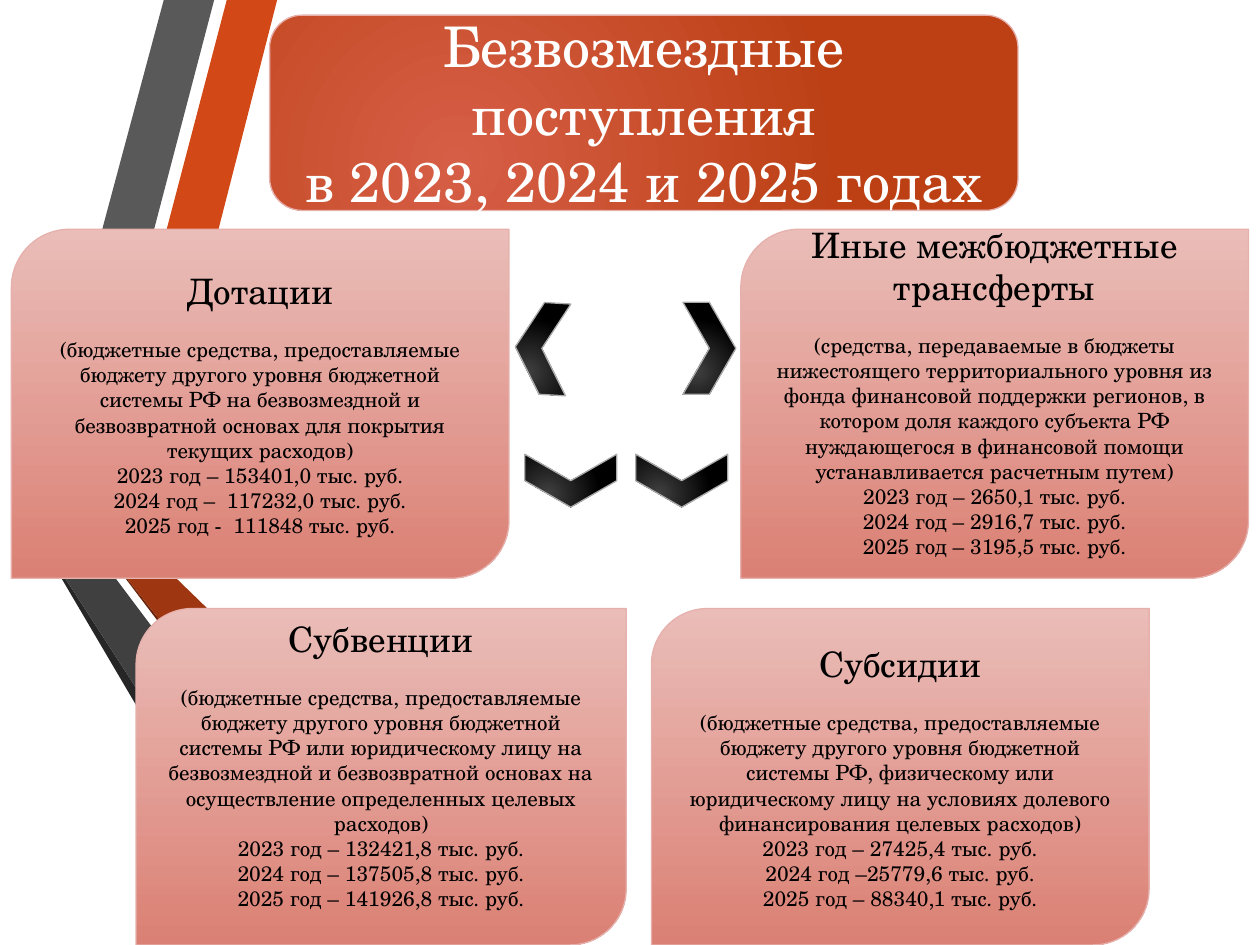
from dataclasses import dataclass

from lxml.etree import SubElement
from pptx import Presentation
from pptx.dml.color import RGBColor
from pptx.enum.shapes import MSO_SHAPE as Preset
from pptx.enum.text import MSO_ANCHOR as Anchor, MSO_AUTO_SIZE as AutoSize, PP_ALIGN as Align
from pptx.oxml.ns import qn
from pptx.util import Inches, Pt

CELL = Inches(0.1)  # the slide is a grid of 100 columns by 75 rows
COLUMNS, ROWS = 100, 75


@dataclass(frozen=True)
class Theme:
    font: str = "TeX Gyre Schola"
    title_size: int = 32
    heading_size: int = 20
    body_size: int = 12
    blank_line: float = 14.4
    edge_width: float = 0.75
    title_text: str = "FFFFFF"
    card_text: str = "000000"
    card_edge: str = "E6B1AC"
    arrow_edge: str = "ABABAB"
    title_fill: tuple = ("D65E46", "BC4014")
    card_fill: tuple = ("EABDB8", "DB8074")
    arrow_fill: tuple = ("404040", "000000")


@dataclass(frozen=True)
class Box:
    col: float
    row: float
    cols: float
    rows: float

    def emu(self) -> list[int]:
        return [round(n * CELL) for n in (self.col, self.row, self.cols, self.rows)]


@dataclass(frozen=True)
class Ribbon:
    color: str
    corners: tuple


@dataclass(frozen=True)
class Card:
    box: Box
    heading: str
    meaning: str
    years: tuple
    raised: bool = False  # text sits half a line above the middle


@dataclass(frozen=True)
class Arrow:
    box: Box
    rotation: float


THEME = Theme()
TITLE = ("Безвозмездные поступления", "в 2023, 2024 и 2025 годах")
TITLE_BOX = Box(21.4, 1.2, 59.4, 15.5)
TOP_ROW, TOP_ROWS = 18.2, 27.7
LOW_ROW, LOW_ROWS = 48.3, 26.7

RIBBONS = (
    Ribbon("D34817", ((7, 42.4), (11, 43.4), (21.9, 0), (17.8, 0))),
    Ribbon("595959", ((16.8, 0), (12.7, 0), (2.2, 41.3), (6.2, 42.2))),
    Ribbon("262626", ((2.3, 41.3), (22.5, ROWS), (23.5, ROWS))),
    Ribbon("69240C", ((33, ROWS), (7.1, 42.5), (32.1, ROWS))),
    Ribbon("9E3611", ((7, 42.4), (7.1, 42.5), (33, ROWS), (43.5, ROWS), (11, 43.4))),
    Ribbon("404040", ((31.3, ROWS), (6.8, 43.2), (6.2, 42.2), (2.2, 41.3), (23.5, ROWS))),
)

CARDS = (
    Card(Box(0.9, TOP_ROW, 39.5, TOP_ROWS), "Дотации",
         "(бюджетные средства, предоставляемые бюджету другого уровня бюджетной системы РФ "
         "на безвозмездной и безвозвратной основах для покрытия текущих расходов)",
         ("2023 год – 153401,0 тыс. руб.", "2024 год –  117232,0 тыс. руб.",
          "2025 год -  111848 тыс. руб.")),
    Card(Box(10.8, LOW_ROW, 38.9, LOW_ROWS), "Субвенции",
         "(бюджетные средства, предоставляемые бюджету другого уровня бюджетной системы РФ "
         "или юридическому лицу на безвозмездной и безвозвратной основах на осуществление "
         "определенных целевых расходов)",
         ("2023 год – 132421,8 тыс. руб.", "2024 год – 137505,8 тыс. руб.",
          "2025 год – 141926,8 тыс. руб."), raised=True),
    Card(Box(51.7, LOW_ROW, 39.5, LOW_ROWS), "Субсидии",
         "(бюджетные средства, предоставляемые бюджету другого уровня бюджетной системы РФ, "
         "физическому или юридическому лицу на условиях долевого финансирования целевых "
         "расходов)",
         ("2023 год – 27425,4 тыс. руб.", "2024 год –25779,6 тыс. руб.",
          "2025 год – 88340,1 тыс. руб.")),
    Card(Box(58.8, TOP_ROW, 40.3, TOP_ROWS), "Иные межбюджетные трансферты",
         "(средства, передаваемые в бюджеты нижестоящего территориального уровня из фонда "
         "финансовой поддержки регионов, в котором доля каждого субъекта РФ нуждающегося в "
         "финансовой помощи устанавливается расчетным путем)",
         ("2023 год – 2650,1 тыс. руб.", "2024 год – 2916,7 тыс. руб.",
          "2025 год – 3195,5 тыс. руб."), raised=True),
)

ARROWS = (
    Arrow(Box(54.2, 24, 4.2, 7.3), 0),
    Arrow(Box(52, 34.5, 4.2, 7.3), 90),
    Arrow(Box(43.2, 34.5, 4.2, 7.3), 90),
    Arrow(Box(40.9, 24, 4.2, 7.3), 183.4),
)


def rgb(color: str) -> RGBColor:
    return RGBColor.from_string(color)


def draw_ribbon(shapes, ribbon: Ribbon) -> None:
    start, *others = ribbon.corners
    builder = shapes.build_freeform(*start, scale=CELL)
    builder.add_line_segments(others, close=True)
    band = builder.convert_to_shape()
    band.shadow.inherit = False
    band.fill.solid()
    band.fill.fore_color.rgb = rgb(ribbon.color)
    band.line.fill.background()


def draw_panel(shapes, preset, box: Box, colors: tuple, edge: str, radial: bool = False):
    """Add a preset shape with a two-colour gradient, downward or radial."""
    panel = shapes.add_shape(preset, *box.emu())
    panel.shadow.inherit = False
    panel.line.color.rgb = rgb(edge)
    panel.line.width = Pt(THEME.edge_width)
    panel.fill.gradient()
    panel.fill.gradient_angle = 270
    for stop, color, position in zip(panel.fill.gradient_stops, colors, (0, 1)):
        stop.color.rgb = rgb(color)
        stop.position = position
    if radial:
        gradient = panel.element.spPr.find(qn("a:gradFill"))
        gradient.remove(gradient.find(qn("a:lin")))
        circle = SubElement(gradient, qn("a:path"), {"path": "circle"})
        SubElement(circle, qn("a:fillToRect"),
                   {"l": "50000", "t": "100000", "r": "100000", "b": "50000"})
    return panel


def write_lines(frame, lines: list[tuple[str, int]], color: str) -> None:
    """Fill a text frame with centred paragraphs given as (text, size)."""
    frame.word_wrap = True
    frame.auto_size = AutoSize.NONE
    frame.vertical_anchor = Anchor.MIDDLE
    for index, (text, size) in enumerate(lines):
        paragraph = frame.add_paragraph() if index else frame.paragraphs[0]
        paragraph.alignment = Align.CENTER
        run = paragraph.add_run()
        run.text = text
        run.font.name = THEME.font
        run.font.size = Pt(size)
        run.font.color.rgb = rgb(color)


def draw_title(slide) -> None:
    plate = draw_panel(slide.shapes, Preset.ROUNDED_RECTANGLE, TITLE_BOX,
                       THEME.title_fill, THEME.card_edge, radial=True)
    title = slide.shapes.title
    title.left, title.top, title.width, title.height = TITLE_BOX.emu()
    write_lines(title.text_frame, [(line, THEME.title_size) for line in TITLE],
                THEME.title_text)
    plate.element.addnext(title.element)


def draw_card(shapes, card: Card) -> None:
    panel = draw_panel(shapes, Preset.ROUND_2_DIAG_RECTANGLE, card.box,
                       THEME.card_fill, THEME.card_edge)
    frame = panel.text_frame
    body = [(text, THEME.body_size) for text in (card.meaning, *card.years)]
    write_lines(frame, [(card.heading, THEME.heading_size), *body], THEME.card_text)
    frame.paragraphs[0].space_after = Pt(THEME.blank_line)
    if card.raised:
        frame.margin_bottom += Pt(THEME.blank_line)


def main() -> None:
    deck = Presentation()
    deck.slide_width, deck.slide_height = COLUMNS * CELL, ROWS * CELL
    slide = deck.slides.add_slide(deck.slide_layouts.get_by_name("Title Only"))
    for ribbon in RIBBONS:
        draw_ribbon(slide.shapes, ribbon)
    draw_title(slide)
    for card in CARDS:
        draw_card(slide.shapes, card)
    for arrow in ARROWS:
        chevron = draw_panel(slide.shapes, Preset.CHEVRON, arrow.box,
                             THEME.arrow_fill, THEME.arrow_edge, radial=True)
        chevron.rotation = arrow.rotation
    deck.save("out.pptx")


if __name__ == "__main__":
    main()
